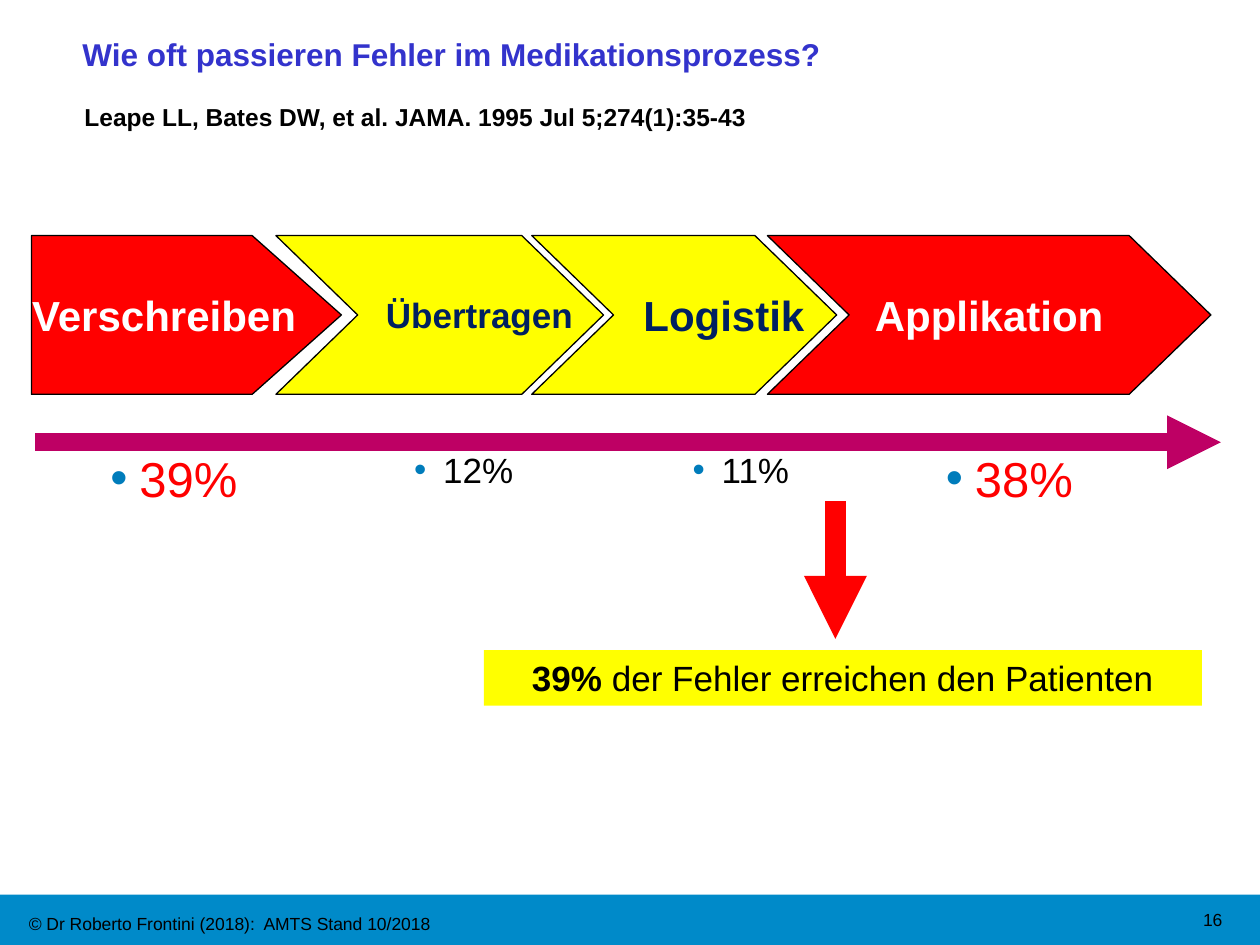
from lxml import etree
from pptx import Presentation
from pptx.dml.color import RGBColor
from pptx.enum.shapes import MSO_CONNECTOR, MSO_SHAPE
from pptx.enum.text import MSO_ANCHOR, PP_ALIGN
from pptx.oxml.ns import qn
from pptx.util import Inches, Pt

LEFT, MID, RIGHT = PP_ALIGN.LEFT, PP_ALIGN.CENTER, PP_ALIGN.RIGHT
PLATE, CHEVRON, RECT = MSO_SHAPE.PENTAGON, MSO_SHAPE.CHEVRON, MSO_SHAPE.RECTANGLE
COLORS = {
    "red": "FF0000", "yellow": "FFFF00", "black": "000000", "white": "FFFFFF",
    "navy": "002060", "title": "3333CC", "bar": "008AC9", "dot": "007CBB",
    "flow": "BE0064",
}
# name, shape, point, left, width, fill, font colour, size, left inset
STEPS = [
    ("Verschreiben", PLATE, 0.562, 0.25, 2.46, "red", "white", 24, 0.1),
    ("Übertragen", CHEVRON, 0.515, 2.19, 2.6, "yellow", "navy", 20, 0.73),
    ("Logistik", CHEVRON, 0.515, 4.22, 2.42, "yellow", "navy", 24, 0.73),
    ("Applikation", CHEVRON, 0.515, 6.09, 3.52, "red", "white", 24, 0.1),
]
# share, left, size, colour
RATES = [
    ("39%", 0.67, 28, "red"), ("12%", 2.97, 20, "black"),
    ("11%", 5.17, 20, "black"), ("38%", 7.3, 28, "red"),
]


def color(name):
    return RGBColor.from_string(COLORS[name])


def style(para, size, tone, bold=False, align=LEFT):
    para.alignment = align
    font = para.font
    font.name, font.size, font.bold = "Arial", Pt(size), bold
    font.color.rgb = color(tone)


def add_text(slide, box, text, size, tone, bold=False, align=LEFT):
    frame = slide.shapes.add_textbox(*map(Inches, box)).text_frame
    frame.word_wrap = True
    frame.vertical_anchor = MSO_ANCHOR.MIDDLE
    para = frame.paragraphs[0]
    para.text = text
    style(para, size, tone, bold, align)
    return frame


def add_shape(slide, kind, box, fill, edge=None):
    shape = slide.shapes.add_shape(kind, *map(Inches, box))
    shape.shadow.inherit = False
    shape.fill.solid()
    shape.fill.fore_color.rgb = color(fill)
    if edge:
        shape.line.color.rgb = color(edge)
        shape.line.width = Pt(0.75)
    else:
        shape.line.fill.background()
    return shape


def add_arrow(slide, start, end, tone, width):
    line = slide.shapes.add_connector(
        MSO_CONNECTOR.STRAIGHT, *map(Inches, start + end))
    line.line.color.rgb = color(tone)
    line.line.width = Pt(width)
    etree.SubElement(line.line._get_or_add_ln(), qn("a:tailEnd"), type="triangle")
    etree.SubElement(line._element.spPr, qn("a:effectLst"))


def add_bullet(para):
    props = para._p.get_or_add_pPr()
    gap = Inches(0.23)
    props.set("marL", str(gap))
    props.set("indent", str(-gap))
    tint = etree.SubElement(props, qn("a:buClr"))
    etree.SubElement(tint, qn("a:srgbClr"), val=COLORS["dot"])
    etree.SubElement(props, qn("a:buFont"), typeface="Arial")
    etree.SubElement(props, qn("a:buChar"), char="•")


def add_step(slide, name, kind, point, left, width, fill, tone, size, inset):
    shape = add_shape(slide, kind, (left, 1.87, width, 1.26), fill, "black")
    shape.adjustments[0] = point
    frame = shape.text_frame
    frame.word_wrap = False
    frame.margin_left = Inches(inset)
    frame.vertical_anchor = MSO_ANCHOR.MIDDLE
    frame.text = name
    style(frame.paragraphs[0], size, tone, True, MID)


def add_rate(slide, share, left, size, tone):
    height = 0.57 if size > 20 else 0.44
    frame = slide.shapes.add_textbox(
        *map(Inches, (left, 3.51, 1.42, height))).text_frame
    frame.word_wrap = True
    para = frame.paragraphs[0]
    para.text = share
    add_bullet(para)
    style(para, size, tone, align=MID)


def add_result(slide):
    frame = add_shape(slide, RECT, (3.84, 5.16, 5.7, 0.44), "yellow").text_frame
    frame.word_wrap = True
    para = frame.paragraphs[0]
    style(para, 20, "black", align=MID)
    share = para.add_run()
    share.text = "39% "
    share.font.bold = True
    para.add_run().text = "der Fehler erreichen den Patienten"


def set_title(slide, text):
    title = slide.shapes.title
    title.left, title.top, title.width, title.height = map(
        Inches, (0.12, 0.23, 6.93, 0.4))
    title.text_frame.vertical_anchor = MSO_ANCHOR.MIDDLE
    title.text_frame.text = text
    style(title.text_frame.paragraphs[0], 18, "title", True, MID)


def main():
    deck = Presentation()
    deck.slide_width, deck.slide_height = Inches(10), Inches(7.5)
    slide = deck.slides.add_slide(deck.slide_layouts[5])
    set_title(slide, "Wie oft passieren Fehler im Medikationsprozess?")
    source = add_text(slide, (0.67, 0.78, 8.83, 0.3),
                      "Leape LL, Bates DW, et al. JAMA. 1995 Jul 5;274(1):35-43",
                      14, "black", True)
    source.margin_left = 0
    add_shape(slide, RECT, (0, 7.1, 10, 0.4), "bar")
    for rate in RATES:
        add_rate(slide, *rate)
    add_arrow(slide, (6.63, 3.98), (6.63, 5.07), "red", 12)
    add_arrow(slide, (0.28, 3.51), (9.69, 3.51), "flow", 10.25)
    for step in STEPS:
        add_step(slide, *step)
    add_result(slide)
    add_text(slide, (0.13, 7.17, 9.12, 0.32),
             "© Dr Roberto Frontini (2018):  AMTS Stand 10/2018", 10, "black")
    add_text(slide, (9.36, 7.14, 0.44, 0.31), "16", 10, "black", align=RIGHT)
    deck.save("out.pptx")


if __name__ == "__main__":
    main()
